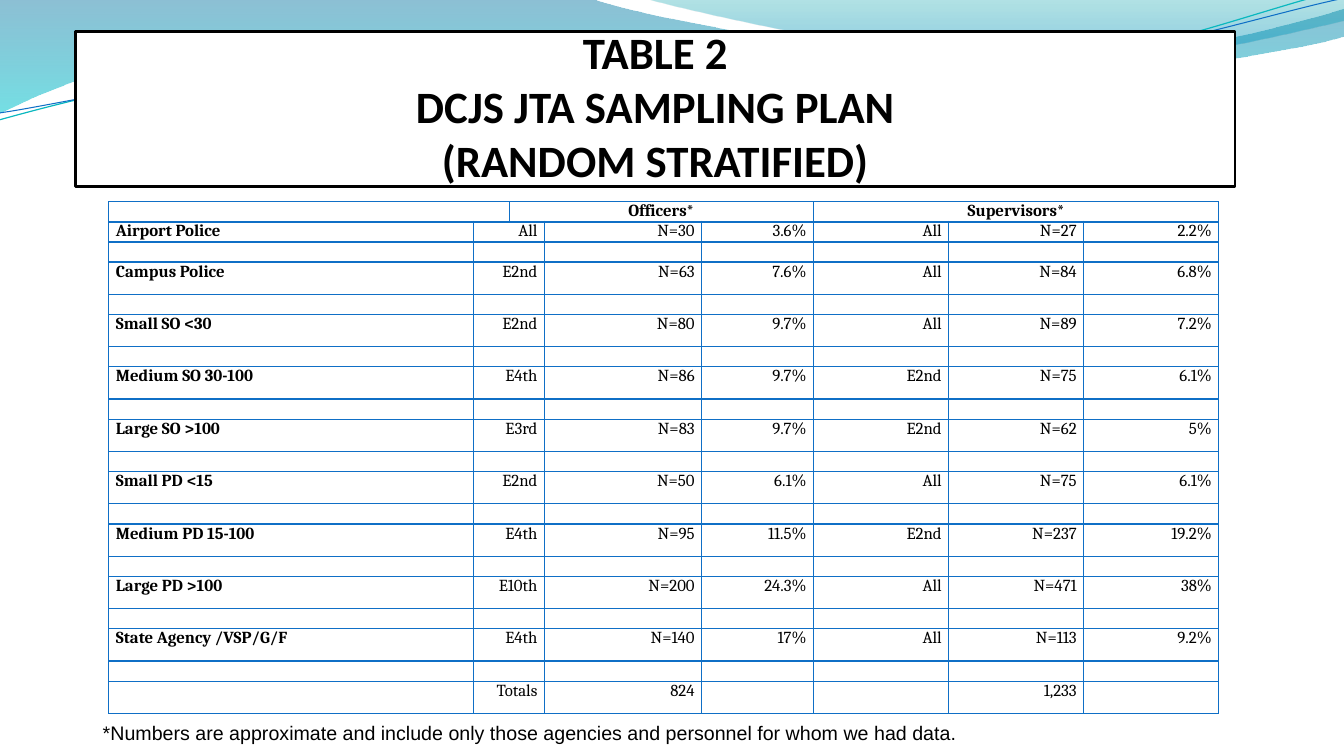
"""Builds the sampling plan slide: wave bands, boxed title, stratified table and footnote."""
from dataclasses import dataclass

from lxml.etree import SubElement
from pptx import Presentation
from pptx.dml.color import RGBColor as Rgb
from pptx.enum.text import MSO_ANCHOR as Anchor, MSO_AUTO_SIZE as AutoSize, PP_ALIGN as Align
from pptx.oxml.ns import qn
from pptx.util import Inches, Pt


@dataclass(frozen=True)
class Theme:
    ink: str = "000000"
    paper: str = "FFFFFF"
    grid: str = "0F6FC6"
    teal_line: str = "0AB8BF"
    upper_wave: tuple = (("0074A1", 0, 45), ("00C6CF", 1, 55))
    lower_wave: tuple = (("00A1A9", 0, 30), ("008BBF", 0.8, 45))
    title_font: str = "Calibri"
    table_font: str = "Cambria"
    note_font: str = "Arial"
    title_size: int = 32
    table_size: int = 12
    note_size: int = 14


theme = Theme()


def add_wave(shapes, start, segments, close):
    """Draw straight (2 numbers) and cubic (6 numbers) segments as one outline."""
    outline = shapes.build_freeform(Inches(start[0]), Inches(start[1]))
    for segment in segments:
        corners = [(Inches(x), Inches(y)) for x, y in zip(segment[::2], segment[1::2])]
        outline.add_line_segments(corners, close=False)
    wave = outline.convert_to_shape()
    wave.shadow.inherit = False
    strokes = iter(list(wave._element.iter(qn("a:lnTo"))))
    for segment in segments:
        stroke = next(strokes)
        if len(segment) == 6:
            stroke.tag = qn("a:cubicBezTo")
            for _ in range(2):
                handle = next(strokes)
                stroke.append(handle[0])
                handle.getparent().remove(handle)
    if close:
        SubElement(next(wave._element.iter(qn("a:path"))), qn("a:close"))
    return wave


def add_text(paragraph, text, font, size, bold=False):
    """Append one formatted run."""
    run = paragraph.add_run()
    run.text = text
    run.font.name, run.font.size, run.font.bold = font, Pt(size), bold
    run.font.color.rgb = Rgb.from_string(theme.ink)


deck = Presentation()
deck.slide_width, deck.slide_height = Inches(13.33), Inches(7.5)
slide = deck.slides.add_slide(deck.slide_layouts[5])
shapes = slide.shapes

bands = [
    ((0, 0), [(5.87, -0.01), (6.34, 0.17, 8.85, 0.63, 10.11, 0.63),
              (11.38, 0.63, 12.78, 0.26, 13.33, 0.09), (13.35, 0.36),
              (13.11, 0.44, 11.6, 0.76, 9.94, 0.75), (8.29, 0.75, 5.09, 0.28, 3.43, 0.34),
              (1.72, 0.36, 0.61, 0.83, -0.01, 1.13), (0, 0)], theme.upper_wave),
    ((6.39, -0.01), [(6.79, 0.11, 9.09, 0.62, 10.25, 0.65),
                     (11.41, 0.69, 12.82, 0.32, 13.33, 0.21), (13.33, 0), (6.39, -0.01)],
     theme.lower_wave),
]
for start, segments, stops in bands:
    band = add_wave(shapes, start, segments, True)
    band.line.fill.background()
    band.fill.gradient()
    band.fill.gradient_angle = 270
    for stop, (color, position, _) in zip(band.fill.gradient_stops, stops):
        stop.color.rgb, stop.position = Rgb.from_string(color), position
    for tint, (_, _, opacity) in zip(band._element.spPr.iter(qn("a:srgbClr")), stops):
        SubElement(tint, qn("a:alpha"), val=str(opacity * 1000))

strands = [
    ((-0.01, 1.19), [(0.64, 1.01, 2.11, 0.62, 3.69, 0.55), (5.27, 0.48, 7.9, 0.87, 9.5, 0.76),
                     (11.1, 0.66, 12.52, 0.08, 13.31, -0.1)], theme.teal_line, 0.85),
    ((0, 1.12), [(0.63, 1.03, 2.18, 0.66, 3.78, 0.59), (5.37, 0.53, 7.96, 0.82, 9.55, 0.72),
                 (11.15, 0.62, 12.55, 0.14, 13.34, -0.02)], theme.grid, 0.75),
]
for start, segments, color, width in strands:
    strand = add_wave(shapes, start, segments, False)
    strand.fill.background()
    strand.line.color.rgb, strand.line.width = Rgb.from_string(color), Pt(width)

title = shapes.title
shapes._spTree.append(title._element)
title.left, title.top, title.width, title.height = map(Inches, (0.75, 0.31, 11.5, 1.54))
title.fill.solid()
title.fill.fore_color.rgb = Rgb.from_string(theme.paper)
title.line.color.rgb, title.line.width = Rgb.from_string(theme.ink), Pt(2)
heading = title.text_frame
heading.auto_size, heading.vertical_anchor, heading.word_wrap = AutoSize.NONE, Anchor.BOTTOM, True
heading.margin_left = heading.margin_right = heading.margin_bottom = 0
heading.margin_top = Inches(0.05)
heading_lines = heading.paragraphs[0]
heading_lines.alignment = Align.CENTER
for index, line in enumerate(("TABLE 2", "DCJS JTA SAMPLING PLAN", "(RANDOM STRATIFIED)")):
    if index:
        heading_lines.add_line_break()
    add_text(heading_lines, line, theme.title_font, theme.title_size, True)

strata = [
    ("Airport Police", "All", "N=30", "3.6%", "All", "N=27", "2.2%"),
    ("Campus Police", "E2nd", "N=63", "7.6%", "All", "N=84", "6.8%"),
    ("Small SO <30", "E2nd", "N=80", "9.7%", "All", "N=89", "7.2%"),
    ("Medium SO 30-100", "E4th", "N=86", "9.7%", "E2nd", "N=75", "6.1%"),
    ("Large SO >100", "E3rd", "N=83", "9.7%", "E2nd", "N=62", "5%"),
    ("Small PD <15", "E2nd", "N=50", "6.1%", "All", "N=75", "6.1%"),
    ("Medium PD 15-100", "E4th", "N=95", "11.5%", "E2nd", "N=237", "19.2%"),
    ("Large PD >100", "E10th", "N=200", "24.3%", "All", "N=471", "38%"),
    ("State Agency /VSP/G/F", "E4th", "N=140", "17%", "All", "N=113", "9.2%"),
    ("", "Totals", "824", "", "", "1,233", ""),
]
plan_rows = [("", "", "Officers*", "", "", "Supervisors*", "", "")]
for index, (stratum, rate, *counts) in enumerate(strata):
    if index:
        plan_rows.append(("",) * 8)
    plan_rows.append((stratum, rate, "", *counts))
column_widths = (3.62, 0.35, 0.35, 1.56, 1.11, 1.34, 1.34, 1.34)

plan = shapes.add_table(len(plan_rows), len(column_widths), Inches(1.08), Inches(2),
                        Inches(sum(column_widths)), Inches(5.08)).table
plan.first_row = plan.horz_banding = False
for column, width in zip(plan.columns, column_widths):
    column.width = Inches(width)
for r, texts in enumerate(plan_rows):
    plan.rows[r].height = Inches(0.32 if r > 2 and r % 2 else 0.2)
    for c, text in enumerate(texts):
        cell = plan.cell(r, c)
        cell.margin_left = cell.margin_right = Inches(0.07)
        cell.margin_top = cell.margin_bottom = 0
        entry = cell.text_frame.paragraphs[0]
        entry.alignment = Align.CENTER if r == 0 else Align.RIGHT if c else Align.LEFT
        if text:
            add_text(entry, text, theme.table_font, theme.table_size, r == 0 or c == 0)
        else:
            blank = SubElement(entry._p, qn("a:endParaRPr"), sz=str(theme.table_size * 100))
            SubElement(blank, qn("a:latin"), typeface=theme.table_font)
        borders = cell._tc.get_or_add_tcPr()
        for side in "LRTB":
            heavy = (r == 0 and side == "B") or (r == 1 and side == "T")
            edge = SubElement(borders, qn(f"a:ln{side}"), w=str(Pt(2 if heavy else 1)))
            SubElement(SubElement(edge, qn("a:solidFill")), qn("a:srgbClr"), val=theme.grid)
        cell.fill.background()
    for first, last in ((0, 1), (2, 4), (5, 7)) if r == 0 else ((1, 2),):
        plan.cell(r, first).merge(plan.cell(r, last))

footnote = shapes.add_textbox(Inches(0.92), Inches(7.1), Inches(10.79), Inches(0.34)).text_frame
footnote.word_wrap, footnote.auto_size = True, AutoSize.SHAPE_TO_FIT_TEXT
footnote.paragraphs[0].alignment = Align.JUSTIFY
add_text(footnote.paragraphs[0], "*Numbers are approximate and include only those agencies and "
         "personnel for whom we had data.", theme.note_font, theme.note_size)

deck.save("out.pptx")
